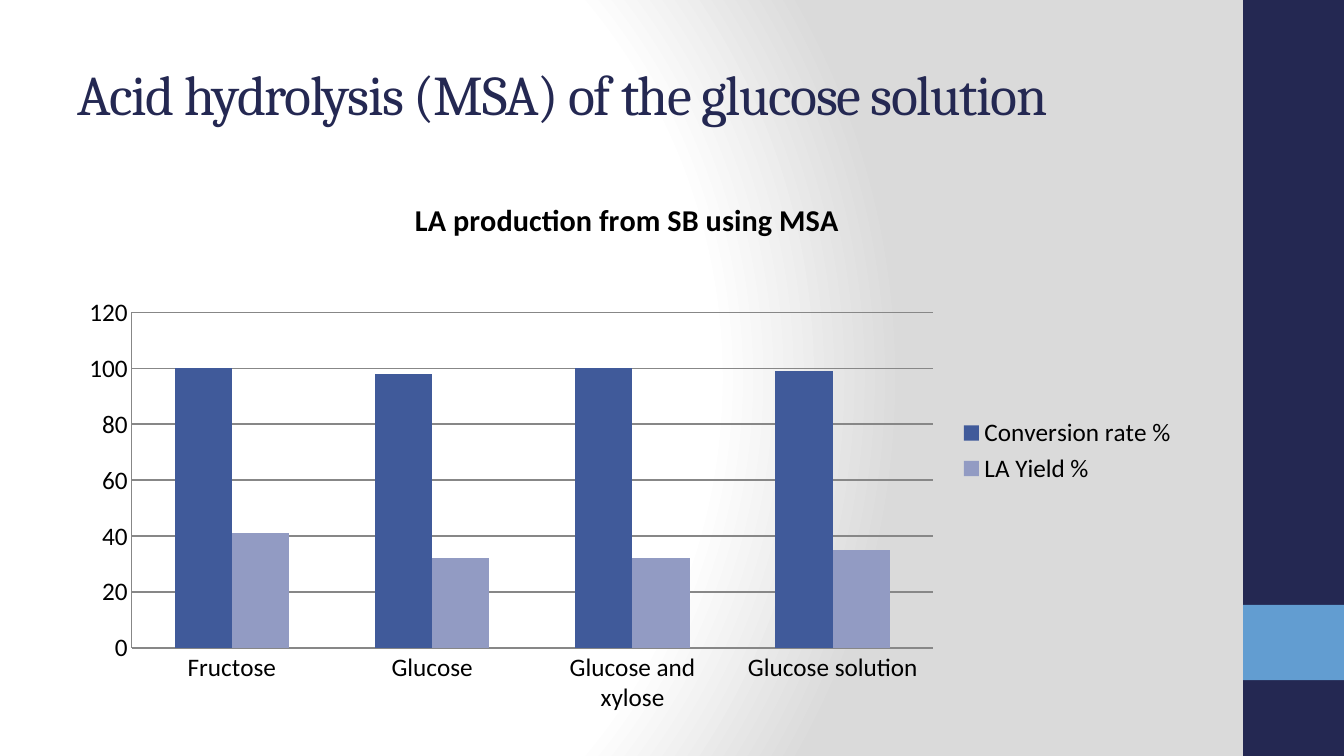
from dataclasses import dataclass

from pptx import Presentation
from pptx.chart.data import CategoryChartData
from pptx.dml.color import RGBColor
from pptx.enum.chart import XL_CHART_TYPE, XL_LEGEND_POSITION, XL_TICK_MARK
from pptx.enum.shapes import MSO_SHAPE
from pptx.enum.text import MSO_ANCHOR, MSO_AUTO_SIZE, PP_ALIGN
from pptx.oxml import parse_xml
from pptx.oxml.ns import nsdecls
from pptx.util import Cm, Pt

RECTANGLE = MSO_SHAPE.RECTANGLE
COLUMNS = XL_CHART_TYPE.COLUMN_CLUSTERED
LEGEND_RIGHT = XL_LEGEND_POSITION.RIGHT
NO_TICKS = XL_TICK_MARK.NONE
MIDDLE = MSO_ANCHOR.MIDDLE
NO_AUTOFIT = MSO_AUTO_SIZE.NONE
LEFT = PP_ALIGN.LEFT

NAVY, SKY, GRID, BLACK = "242852", "629DD1", "878787", "000000"
TITLE_ONLY = 5
SLIDE_WIDTH, SLIDE_HEIGHT = 33.87, 19.05
CONTENT_LEFT, CONTENT_WIDTH = 1.7, 28.22
CHART_TOP, CHART_HEIGHT = 4.45, 13.82


@dataclass
class Band:
    top: float
    height: float
    color: str


@dataclass
class Series:
    name: str
    values: tuple
    color: str


BANDS = [Band(0, SLIDE_HEIGHT, NAVY), Band(15.24, 1.9, SKY)]
CATEGORIES = ["Fructose", "Glucose", "Glucose and xylose", "Glucose solution"]
SERIES = [
    Series("Conversion rate %", (100, 98, 100, 99), "405A9A"),
    Series("LA Yield %", (41, 32, 32, 35), "929BC3"),
]
TITLE_FRAME = {"vertical_anchor": MIDDLE, "word_wrap": True, "auto_size": NO_AUTOFIT}
TITLE_FONT = {"name": "Cambria", "size": Pt(40), "bold": False}
CHART_FONT = {"name": "Calibri", "size": Pt(18), "bold": False}
CHART_TITLE_FONT = {"name": "Calibri", "size": Pt(21.6), "bold": True}
AXIS_FORMAT = {"major_tick_mark": NO_TICKS, "minor_tick_mark": NO_TICKS}
VALUE_SCALE = {"minimum_scale": 0, "maximum_scale": 120, "major_unit": 20,
               "has_major_gridlines": True}


def rgb(color: str) -> RGBColor:
    return RGBColor.from_string(color)


def apply(target, values: dict) -> None:
    for name, value in values.items():
        setattr(target, name, value)


def format_font(font, values: dict, color: str) -> None:
    apply(font, values)
    font.color.rgb = rgb(color)


def set_background(slide) -> None:
    stops = "".join(
        f'<a:gs pos="{position * 1000}"><a:srgbClr val="{color}"/></a:gs>'
        for position, color in ((0, "FFFFFF"), (75, "FFFFFF"), (100, "DADADA"))
    )
    background = parse_xml(
        f'<p:bg {nsdecls("p", "a")}><p:bgPr><a:gradFill rotWithShape="1">'
        f'<a:gsLst>{stops}</a:gsLst><a:path path="circle">'
        '<a:fillToRect l="20000" t="50000" r="100000" b="50000"/></a:path>'
        '</a:gradFill><a:effectLst/></p:bgPr></p:bg>'
    )
    slide.element.cSld.insert(0, background)


def add_band(slide, band: Band) -> None:
    width = 2.54
    shape = slide.shapes.add_shape(
        RECTANGLE, Cm(SLIDE_WIDTH - width), Cm(band.top), Cm(width), Cm(band.height))
    shape.shadow.inherit = False
    shape.fill.solid()
    shape.fill.fore_color.rgb = rgb(band.color)
    shape.line.fill.background()


def set_title(slide, text: str) -> None:
    title = slide.shapes.title
    apply(title, {"left": Cm(CONTENT_LEFT), "top": Cm(0.76),
                  "width": Cm(CONTENT_WIDTH), "height": Cm(3.18)})
    apply(title.text_frame, TITLE_FRAME)
    paragraph = title.text_frame.paragraphs[0]
    paragraph.alignment = LEFT
    run = paragraph.add_run()
    run.text = text
    format_font(run.font, TITLE_FONT, NAVY)
    run.font._element.set("spc", "-100")


def place(element, **lengths: float) -> None:
    """Place a chart part by lengths in cm from the chart's corner."""
    for existing in element.xpath("c:layout"):
        element.remove(existing)
    totals = {"x": CONTENT_WIDTH, "y": CHART_HEIGHT, "w": CONTENT_WIDTH, "h": CHART_HEIGHT}
    target = '<c:layoutTarget val="inner"/>' if "w" in lengths else ""
    values = "".join(f'<c:{key} val="{length / totals[key]:.4f}"/>'
                     for key, length in lengths.items())
    layout = parse_xml(
        f'<c:layout {nsdecls("c")}><c:manualLayout>{target}<c:xMode val="edge"/>'
        f'<c:yMode val="edge"/>{values}</c:manualLayout></c:layout>')
    element.insert(len(element.xpath("c:tx")), layout)


def add_yield_chart(slide) -> None:
    data = CategoryChartData()
    data.categories = CATEGORIES
    for series in SERIES:
        data.add_series(series.name, series.values)
    chart = slide.shapes.add_chart(
        COLUMNS, Cm(CONTENT_LEFT), Cm(CHART_TOP), Cm(CONTENT_WIDTH), Cm(CHART_HEIGHT),
        data).chart
    format_font(chart.font, CHART_FONT, BLACK)

    # Chart title
    chart.has_title = True
    paragraph = chart.chart_title.text_frame.paragraphs[0]
    run = paragraph.add_run()
    run.text = "LA production from SB using MSA"
    format_font(run.font, CHART_TITLE_FONT, BLACK)
    place(chart.chart_title._element, x=8.62, y=0.41)

    # Legend
    chart.has_legend = True
    apply(chart.legend, {"position": LEGEND_RIGHT, "include_in_layout": False})

    # Axes
    for axis in (chart.category_axis, chart.value_axis):
        apply(axis, AXIS_FORMAT)
    apply(chart.value_axis, VALUE_SCALE)
    for line in (chart.category_axis.format.line, chart.value_axis.format.line,
                 chart.value_axis.major_gridlines.format.line):
        line.color.rgb = rgb(GRID)
        line.width = Pt(1)

    # Columns
    plot = chart.plots[0]
    apply(plot, {"gap_width": 150, "overlap": 0, "vary_by_categories": False})
    for column, series in zip(plot.series, SERIES):
        column.format.fill.solid()
        column.format.fill.fore_color.rgb = rgb(series.color)
    place(chart._chartSpace.chart.plotArea, x=1.62, y=3.42, w=20.19, h=8.46)


def main() -> None:
    presentation = Presentation()
    apply(presentation, {"slide_width": Cm(SLIDE_WIDTH), "slide_height": Cm(SLIDE_HEIGHT)})
    slide = presentation.slides.add_slide(presentation.slide_layouts[TITLE_ONLY])
    set_background(slide)
    for band in BANDS:
        add_band(slide, band)
    set_title(slide, "Acid hydrolysis (MSA) of the glucose solution")
    add_yield_chart(slide)
    presentation.save("out.pptx")


if __name__ == "__main__":
    main()
